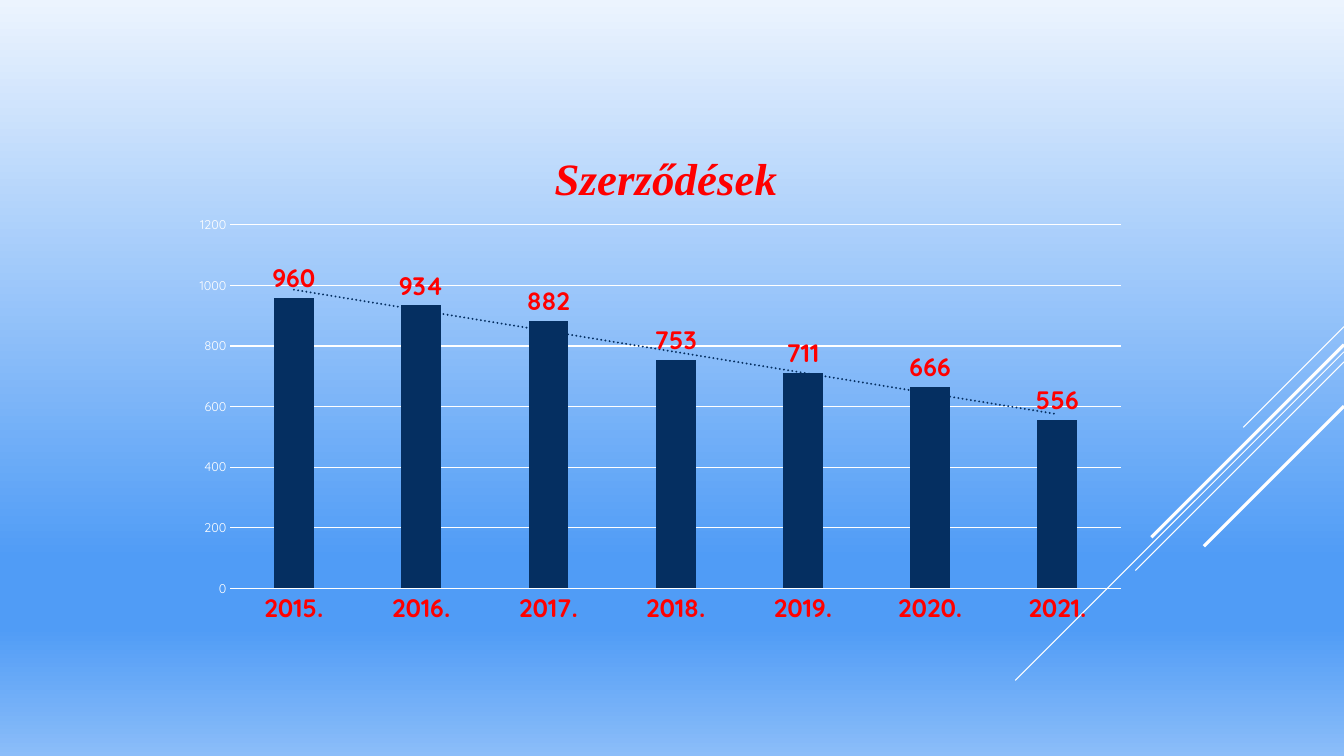
from typing import Any, NamedTuple

from pptx import Presentation
from pptx.chart.chart import Chart
from pptx.chart.data import CategoryChartData
from pptx.dml.color import RGBColor
from pptx.enum.chart import XL_CHART_TYPE, XL_LABEL_POSITION, XL_TICK_MARK
from pptx.enum.shapes import MSO_CONNECTOR
from pptx.oxml import parse_xml
from pptx.oxml.ns import nsdecls
from pptx.slide import Slide
from pptx.util import Inches, Pt

COLUMN = XL_CHART_TYPE.COLUMN_CLUSTERED
OUTSIDE_END = XL_LABEL_POSITION.OUTSIDE_END
NO_TICK = XL_TICK_MARK.NONE
STRAIGHT = MSO_CONNECTOR.STRAIGHT

WIDTH, HEIGHT = 13.33, 7.5
COLORS = {"white": "FFFFFF", "red": "FF0000", "navy": "052F61"}
BACKGROUND_STOPS = {0: "ECF4FE", 74: "509CF6", 83: "509CF6", 100: "8BBDF9"}
BODY_FONT = "Quicksand"
EMPHASIS = {"name": BODY_FONT, "size": Pt(18), "bold": True}
CONTRACTS = {
    "2015.": 960, "2016.": 934, "2017.": 882, "2018.": 753,
    "2019.": 711, "2020.": 666, "2021.": 556,
}


class Ray(NamedTuple):
    """A 45 degree line that runs down and left from the right edge."""
    top: float
    drop: float
    weight: float


class Frame(NamedTuple):
    """Position inside the chart, as fractions of its size."""
    x: float
    y: float
    w: float | None = None
    h: float | None = None


RAYS = [
    Ray(3.24, 1.0, 0.75),
    Ray(3.49, 3.26, 0.75),
    Ray(3.59, 2.07, 0.75),
    Ray(3.42, 1.91, 2.25),
    Ray(4.03, 1.39, 2.25),
]
TITLE_FRAME = Frame(0.38, 0.05)
PLOT_FRAME = Frame(0.05, 0.21, 0.93, 0.7)


def rgb(color: str) -> RGBColor:
    return RGBColor.from_string(COLORS[color])


def format_font(font: Any, color: str, values: dict[str, Any]) -> None:
    for name, value in values.items():
        setattr(font, name, value)
    font.color.rgb = rgb(color)


def format_line(line: Any, color: str, weight: float) -> None:
    line.color.rgb = rgb(color)
    line.width = Pt(weight)


def paint_background(page: Slide) -> None:
    fill = page.background.fill
    fill.gradient()
    fill.gradient_angle = 270
    stops = "".join(
        f'<a:gs pos="{percent * 1000}"><a:srgbClr val="{color}"/></a:gs>'
        for percent, color in BACKGROUND_STOPS.items()
    )
    old_stops = page.background._cSld.xpath(".//a:gsLst")[0]
    new_stops = parse_xml(f'<a:gsLst {nsdecls("a")}>{stops}</a:gsLst>')
    old_stops.getparent().replace(old_stops, new_stops)


def draw_ray(page: Slide, ray: Ray) -> None:
    line = page.shapes.add_connector(
        STRAIGHT, Inches(WIDTH), Inches(ray.top),
        Inches(WIDTH - ray.drop), Inches(ray.top + ray.drop),
    )
    format_line(line.line, "white", ray.weight)
    line._element.spPr.append(parse_xml(f'<a:effectLst {nsdecls("a")}/>'))


def place_before(successor: Any, frame: Frame, target: str = "") -> None:
    """Replace the layout of the successor's parent by a manual one."""
    parent = successor.getparent()
    for old_layout in parent.xpath("./c:layout"):
        parent.remove(old_layout)
    modes = '<c:xMode val="edge"/><c:yMode val="edge"/>'
    sizes = "".join(
        f'<c:{name} val="{value}"/>'
        for name, value in frame._asdict().items() if value is not None
    )
    successor.addprevious(parse_xml(
        f'<c:layout {nsdecls("c")}><c:manualLayout>{target}{modes}{sizes}'
        "</c:manualLayout></c:layout>"
    ))


def add_title(chart: Chart) -> None:
    frame = chart.chart_title.text_frame
    span = frame.paragraphs[0].add_run()
    span.text = "Szerződések"
    format_font(span.font, "red", {
        "name": "Times New Roman", "size": Pt(32), "bold": True, "italic": True,
    })
    place_before(chart._chartSpace.xpath(".//c:title/c:overlay")[0], TITLE_FRAME)


def format_axes(chart: Chart) -> None:
    years, amounts = chart.category_axis, chart.value_axis
    for axis in (years, amounts):
        axis.major_tick_mark = axis.minor_tick_mark = NO_TICK
    format_font(years.tick_labels.font, "red", EMPHASIS)
    format_line(years.format.line, "white", 0.75)
    format_font(amounts.tick_labels.font, "white",
                {"name": BODY_FONT, "size": Pt(9), "bold": False})
    amounts.format.line.fill.background()
    amounts.minimum_scale, amounts.maximum_scale = 0, 1200
    amounts.major_unit = 200
    format_line(amounts.major_gridlines.format.line, "white", 0.75)


def format_columns(chart: Chart) -> None:
    plot = chart.plots[0]
    plot.vary_by_categories = False
    plot.gap_width, plot.overlap = 219, -27
    series = plot.series[0]
    series.format.fill.solid()
    series.format.fill.fore_color.rgb = rgb("navy")
    labels = series.data_labels
    labels.show_value = True
    labels.position = OUTSIDE_END
    format_font(labels.font, "red", EMPHASIS)


def add_trend_line(chart: Chart) -> None:
    categories = chart._chartSpace.xpath(".//c:ser/c:cat")[0]
    categories.addprevious(parse_xml(
        f'<c:trendline {nsdecls("c", "a")}><c:spPr><a:ln w="{Pt(1.5)}" cap="rnd">'
        f'<a:solidFill><a:srgbClr val="{COLORS["navy"]}"/></a:solidFill>'
        '<a:prstDash val="sysDot"/></a:ln></c:spPr><c:trendlineType val="linear"/>'
        '<c:dispRSqr val="0"/><c:dispEq val="0"/></c:trendline>'
    ))


def add_contracts_chart(page: Slide) -> None:
    data = CategoryChartData()
    data.categories = list(CONTRACTS)
    data.add_series("Series 1", list(CONTRACTS.values()))
    chart = page.shapes.add_chart(
        COLUMN, Inches(1.81), Inches(1.15), Inches(9.5), Inches(5.15), data
    ).chart
    chart.has_legend = False
    format_font(chart.font, "white", {"name": BODY_FONT, "size": Pt(10)})
    add_title(chart)
    format_axes(chart)
    format_columns(chart)
    add_trend_line(chart)
    place_before(chart._chartSpace.xpath(".//c:plotArea/c:barChart")[0],
                 PLOT_FRAME, '<c:layoutTarget val="inner"/>')


def main() -> None:
    deck = Presentation()
    deck.slide_width, deck.slide_height = Inches(WIDTH), Inches(HEIGHT)
    page = deck.slides.add_slide(deck.slide_layouts[6])
    paint_background(page)
    for ray in RAYS:
        draw_ray(page, ray)
    add_contracts_chart(page)
    deck.save("out.pptx")


if __name__ == "__main__":
    main()
